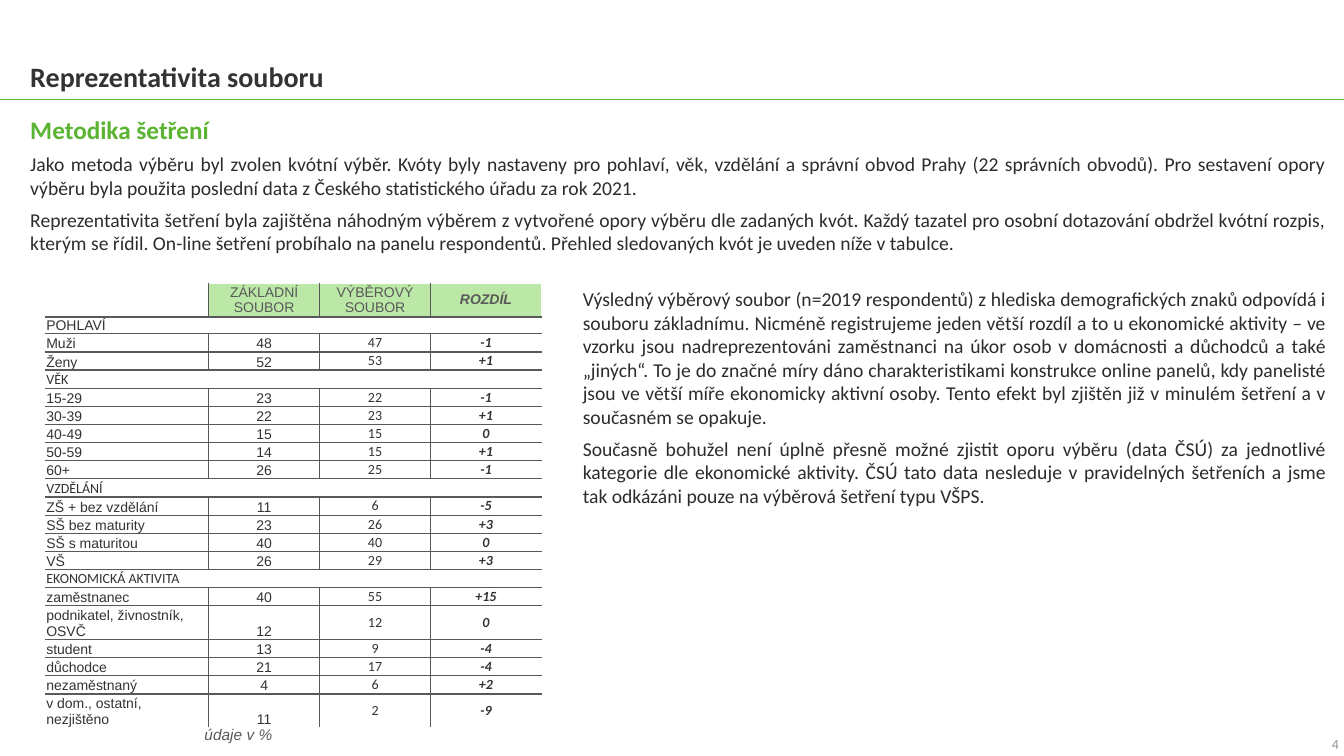
from lxml import etree
from pptx import Presentation
from pptx.dml.color import RGBColor
from pptx.enum.shapes import MSO_CONNECTOR
from pptx.enum.text import MSO_ANCHOR, PP_ALIGN
from pptx.oxml.ns import qn
from pptx.util import Pt

PX = 9144
STRAIGHT = MSO_CONNECTOR.STRAIGHT
TOP, MIDDLE, BOTTOM = MSO_ANCHOR.TOP, MSO_ANCHOR.MIDDLE, MSO_ANCHOR.BOTTOM
LEFT, CENTER, RIGHT, JUSTIFY = PP_ALIGN.LEFT, PP_ALIGN.CENTER, PP_ALIGN.RIGHT, PP_ALIGN.JUSTIFY

GREEN, LINE_GREEN, HEADER_GREEN = "5AB432", "5BB531", "BBE7A7"
DARK, GRAY = "333333", "595959"
BODY = {"name": "Calibri", "size": Pt(14), "color": "2C2C2C"}
ARIAL = {"name": "Arial", "size": Pt(10), "color": DARK}
CALIBRI = {**ARIAL, "name": "Calibri"}
EMPHASIS = {"bold": True, "italic": True}
HEADER = {**ARIAL, "color": GRAY}

INTRO = [
    "Jako metoda výběru byl zvolen kvótní výběr. Kvóty byly nastaveny pro pohlaví, věk, vzdělání a správní obvod "
    "Prahy (22 správních obvodů). Pro sestavení opory výběru byla použita poslední data z Českého statistického "
    "úřadu za rok 2021.",
    "Reprezentativita šetření byla zajištěna náhodným výběrem z vytvořené opory výběru dle zadaných kvót. Každý "
    "tazatel pro osobní dotazování obdržel kvótní rozpis, kterým se řídil. On-line šetření probíhalo na panelu "
    "respondentů. Přehled sledovaných kvót je uveden níže v tabulce.",
]
FINDINGS = [
    "Výsledný výběrový soubor (n=2019 respondentů) z hlediska demografických znaků odpovídá i souboru základnímu. "
    "Nicméně registrujeme jeden větší rozdíl a to u ekonomické aktivity – ve vzorku jsou nadreprezentováni "
    "zaměstnanci na úkor osob v domácnosti a důchodců a také „jiných“. To je do značné míry dáno charakteristikami "
    "konstrukce online panelů, kdy panelisté jsou ve větší míře ekonomicky aktivní osoby. Tento efekt byl zjištěn "
    "již v minulém šetření a v současném se opakuje.",
    "Současně bohužel není úplně přesně možné zjistit oporu výběru (data ČSÚ) za jednotlivé kategorie dle "
    "ekonomické aktivity. ČSÚ tato data nesleduje v pravidelných šetřeních a jsme tak odkázáni pouze na výběrová "
    "šetření typu VŠPS.",
]
QUOTA_ROWS = [
    ("", "ZÁKLADNÍ SOUBOR", "VÝBĚROVÝ SOUBOR", "ROZDÍL"),
    ("POHLAVÍ",),
    ("Muži", "48", "47", "-1"),
    ("Ženy", "52", "53", "+1"),
    ("VĚK",),
    ("15-29", "23", "22", "-1"),
    ("30-39", "22", "23", "+1"),
    ("40-49", "15", "15", "0"),
    ("50-59", "14", "15", "+1"),
    ("60+", "26", "25", "-1"),
    ("VZDĚLÁNÍ",),
    ("ZŠ + bez vzdělání", "11", "6", "-5"),
    ("SŠ bez maturity", "23", "26", "+3"),
    ("SŠ s maturitou", "40", "40", "0"),
    ("VŠ", "26", "29", "+3"),
    ("EKONOMICKÁ AKTIVITA",),
    ("zaměstnanec", "40", "55", "+15"),
    ("podnikatel, živnostník, OSVČ", "12", "12", "0"),
    ("student", "13", "9", "-4"),
    ("důchodce", "21", "17", "-4"),
    ("nezaměstnaný", "4", "6", "+2"),
    ("v dom., ostatní, nezjištěno", "11", "2", "-9"),
]
COLUMN_WIDTHS = (162, 110, 110, 110)
TALL_ROWS = (0, 17, 21)
ROW_HEIGHTS = [32 if row in TALL_ROWS else 18 for row in range(len(QUOTA_ROWS))]
ROW_HEIGHTS[1] = 16


def color(value):
    return RGBColor.from_string(value)


def emu(*lengths):
    return [length * PX for length in lengths]


def set_margins(target, left, top, right, bottom):
    for side, length in zip(("left", "top", "right", "bottom"), emu(left, top, right, bottom)):
        setattr(target, f"margin_{side}", length)


def write(paragraph, text, style, align):
    paragraph.alignment = align
    run = paragraph.add_run()
    run.text = text
    for attribute, value in style.items():
        if attribute == "color":
            run.font.color.rgb = color(value)
        else:
            setattr(run.font, attribute, value)


def add_text(slide, box, texts, style, align=LEFT, anchor=TOP, margins=(4, 4, 4, 4), wrap=True):
    frame = slide.shapes.add_textbox(*emu(*box)).text_frame
    frame.word_wrap = wrap
    frame.vertical_anchor = anchor
    set_margins(frame, *margins)
    for index, text in enumerate(texts):
        paragraph = frame.add_paragraph() if index else frame.paragraphs[0]
        if index:
            paragraph.space_before = Pt(6)
        write(paragraph, text, style, align)


def add_heading(slide, box):
    left, top, width, height = box
    rule = slide.shapes.add_connector(STRAIGHT, *emu(left, top + height, left + width, top + height))
    rule.line.fill.solid()
    rule.line.fill.fore_color.rgb = color(LINE_GREEN)
    rule.line.width = Pt(0.75)
    etree.SubElement(rule._element.spPr, qn("a:effectLst"))
    title_style = {"name": "Calibri", "size": Pt(20), "color": DARK, "bold": True}
    add_text(slide, (left + 26, top + 13, 1102, 79), ["Reprezentativita souboru"], title_style,
             anchor=BOTTOM, margins=(4, 0, 4, 0))


def add_method(slide, box):
    left, top, width, height = box
    subtitle_style = {"name": "Calibri", "size": Pt(18), "color": GREEN, "bold": True}
    add_text(slide, (left, top, 701, 47), ["Metodika šetření"], subtitle_style)
    add_text(slide, (left, top + 38, width, height - 38), INTRO, BODY, JUSTIFY)


def add_border(cell, side):
    properties = cell._tc.get_or_add_tcPr()
    line = etree.SubElement(properties, qn(f"a:ln{side}"), w=str(Pt(1)))
    fill = etree.SubElement(line, qn("a:solidFill"))
    etree.SubElement(fill, qn("a:srgbClr"), val=GRAY)


def cell_style(row, column):
    if row == 0:
        return {**HEADER, **EMPHASIS} if column == 3 else HEADER
    if column == 3:
        return {**CALIBRI, **EMPHASIS}
    is_section = len(QUOTA_ROWS[row]) == 1
    return CALIBRI if column == 2 or (is_section and row > 1) else ARIAL


def format_cell(cell, row, column):
    is_section = len(QUOTA_ROWS[row]) == 1
    edges = {
        "L": column > 0 and not is_section,
        "R": column < 3 and not is_section,
        "T": row > 0,
        "B": row < len(QUOTA_ROWS) - 1,
    }
    for side, visible in edges.items():
        if visible:
            add_border(cell, side)
    if row == 0 and column:
        cell.fill.solid()
        cell.fill.fore_color.rgb = color(HEADER_GREEN)
    else:
        cell.fill.background()
    cell.vertical_anchor = MIDDLE if row == 0 or column > 1 else BOTTOM
    set_margins(cell, 1, 0, 1, 0)
    paragraph = cell.text_frame.paragraphs[0]
    text = QUOTA_ROWS[row][column] if column < len(QUOTA_ROWS[row]) else ""
    if text:
        write(paragraph, text, cell_style(row, column), CENTER if column else LEFT)
    else:
        etree.SubElement(paragraph._p, qn("a:endParaRPr"), sz="800")


def add_quota_table(slide, box):
    left, top, width, height = box
    table = slide.shapes.add_table(len(QUOTA_ROWS), len(COLUMN_WIDTHS), *emu(*box)).table
    table.first_row = table.horz_banding = False
    for column, column_width in zip(table.columns, emu(*COLUMN_WIDTHS)):
        column.width = column_width
    for row, row_height in zip(table.rows, emu(*ROW_HEIGHTS)):
        row.height = row_height
    for row, values in enumerate(QUOTA_ROWS):
        for column in range(len(COLUMN_WIDTHS)):
            format_cell(table.cell(row, column), row, column)
        if len(values) == 1:
            table.cell(row, 0).merge(table.cell(row, 3))
    note_style = {"name": "Arial", "size": Pt(11), "color": GRAY, "italic": True}
    add_text(slide, (left + 148, top + 433, 87, 29), ["údaje v %"], note_style,
             margins=(10, 5, 10, 5), wrap=False)


def main():
    presentation = Presentation()
    presentation.slide_width, presentation.slide_height = emu(1333, 750)
    slide = presentation.slides.add_slide(presentation.slide_layouts[6])
    add_heading(slide, (0, 0, 1333, 99))
    add_method(slide, (26, 109, 1294, 172))
    add_quota_table(slide, (45, 281, sum(COLUMN_WIDTHS), sum(ROW_HEIGHTS)))
    add_text(slide, (574, 281, 746, 346), FINDINGS, BODY, JUSTIFY)
    add_text(slide, (1187, 730, 141, 17), ["4"], {**CALIBRI, "color": "939393"}, RIGHT, margins=(0, 0, 0, 0))
    presentation.save("out.pptx")


if __name__ == "__main__":
    main()
